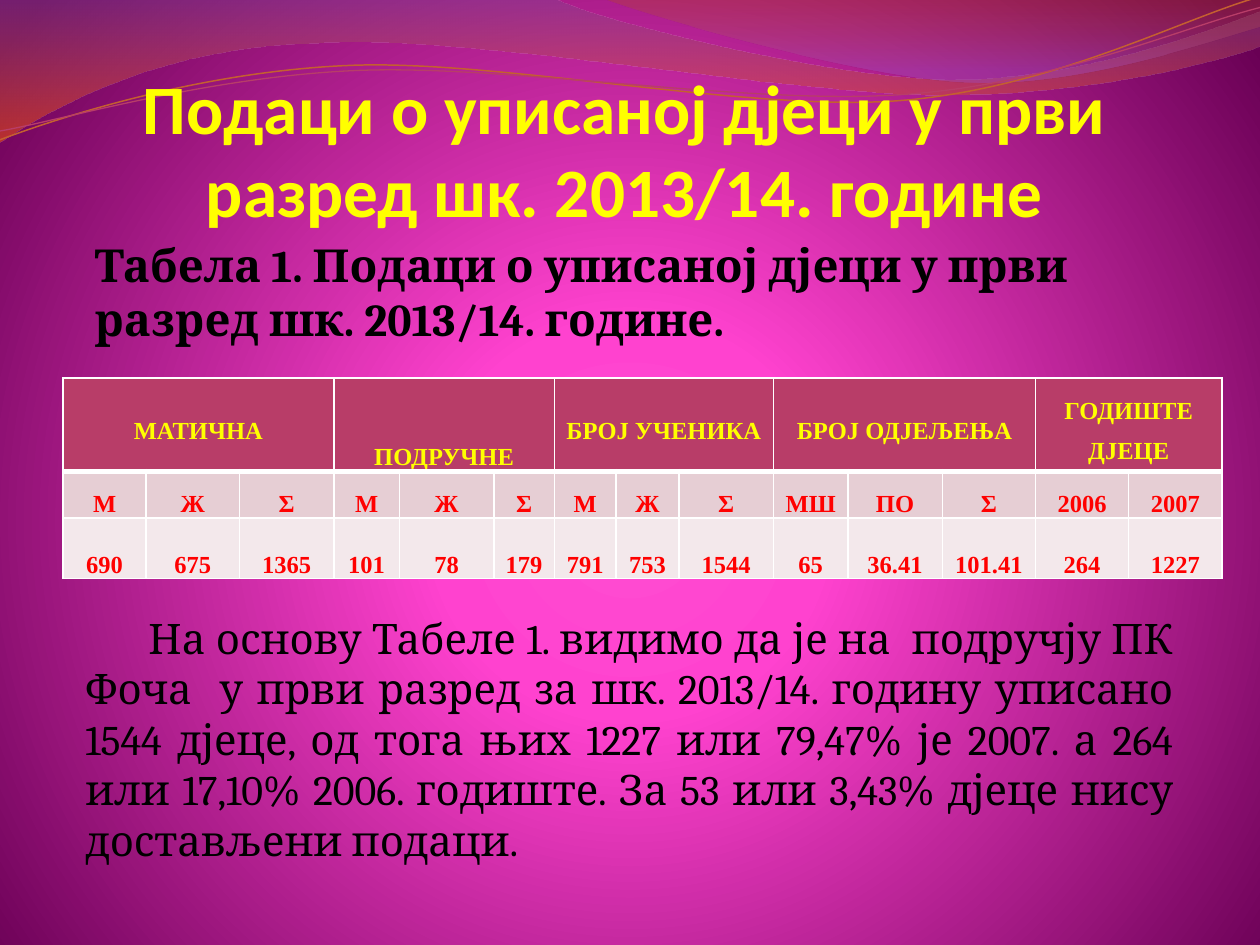
from copy import deepcopy
from math import cos, radians, sin

from lxml import etree
from pptx import Presentation
from pptx.dml.color import RGBColor
from pptx.enum.text import MSO_ANCHOR, MSO_AUTO_SIZE, PP_ALIGN
from pptx.oxml import parse_xml
from pptx.oxml.ns import nsdecls, qn
from pptx.util import Inches, Pt

TOP, MID, LOW = MSO_ANCHOR.TOP, MSO_ANCHOR.MIDDLE, MSO_ANCHOR.BOTTOM
LEFT, CENTER, FULL = PP_ALIGN.LEFT, PP_ALIGN.CENTER, PP_ALIGN.JUSTIFY
FIXED = MSO_AUTO_SIZE.NONE

YELLOW = RGBColor(0xFF, 0xFF, 0x00)
BLACK = RGBColor(0x00, 0x00, 0x00)
RED = RGBColor(0xFF, 0x00, 0x00)
WHITE = RGBColor(0xFF, 0xFF, 0xFF)
WINE = RGBColor(0xB8, 0x3D, 0x68)
ROSE = RGBColor(0xE6, 0xCE, 0xD4)
PALE = RGBColor(0xF3, 0xE8, 0xEB)
RUST = RGBColor(0xC4, 0x5F, 0x30)
PINK = RGBColor(0xFF, 0x4C, 0xD1)
ROSY = RGBColor(0xFF, 0x42, 0xCF)
PLUM = RGBColor(0x69, 0x00, 0x54)
MAUVE = RGBColor(0x83, 0x45, 0x91)
FLAME = RGBColor(0xF3, 0x53, 0x07)
BROWN = RGBColor(0xB7, 0x49, 0x15)
LILAC = RGBColor(0xA1, 0x4B, 0xB4)


def shade(old, stops, course):
    marks = "".join(
        f'<a:gs pos="{pos * 1000}"><a:srgbClr val="{color}">'
        f'<a:alpha val="{alpha * 1000}"/></a:srgbClr></a:gs>'
        for pos, color, alpha in stops)
    fill = parse_xml(f'<a:gradFill {nsdecls("a")} rotWithShape="1">'
                     f'<a:gsLst>{marks}</a:gsLst>{course}</a:gradFill>')
    old.getparent().replace(old, fill)


def style(frame, size, font, color, bold, align):
    for para in frame.paragraphs:
        para.alignment = align
        for run in para.runs:
            run.font.size = Pt(size)
            run.font.name = font
            run.font.bold = bold
            run.font.color.rgb = color


prs = Presentation()
prs.slide_width, prs.slide_height = Inches(10), Inches(7.5)
slide = prs.slides.add_slide(prs.slide_layouts[0])
shapes = slide.shapes
title, lead = slide.placeholders

slide.background.fill.background()
shade(slide.element.find(f'.//{qn("p:bgPr")}/{qn("a:noFill")}'),
      [(0, PINK, 100), (25, ROSY, 100), (100, PLUM, 100)],
      '<a:path path="circle"><a:fillToRect l="10000" t="110000" '
      'r="10000" b="100000"/></a:path>')

waves = [
    ((0, 0), [(4.4, -0.01), (4.76, 0.17, 6.64, 0.63, 7.58, 0.63),
              (8.53, 0.63, 9.58, 0.26, 10, 0.09), (10.01, 0.36),
              (9.83, 0.44, 8.7, 0.76, 7.46, 0.75),
              (6.22, 0.75, 3.82, 0.28, 2.57, 0.34),
              (1.29, 0.36, 0.46, 0.83, -0.01, 1.13)],
     [(0, MAUVE, 45), (100, FLAME, 55)], None),
    ((4.79, -0.01), [(5.09, 0.11, 6.82, 0.62, 7.69, 0.65),
                     (8.56, 0.69, 9.61, 0.32, 10, 0.21), (10, 0)],
     [(0, BROWN, 30), (80, LILAC, 45)], None),
    ((0, 1.11), [(0.48, 0.93, 1.58, 0.57, 2.77, 0.52),
                 (3.95, 0.47, 5.93, 0.89, 7.13, 0.8),
                 (8.33, 0.71, 9.38, 0.15, 9.98, -0.02)],
     None, (RUST, 0.85)),
    ((0, 1.04), [(0.47, 0.96, 1.64, 0.61, 2.83, 0.56),
                 (4.03, 0.51, 5.97, 0.84, 7.17, 0.75),
                 (8.36, 0.67, 9.41, 0.21, 10, 0.06)],
     None, (WINE, 0.75)),
]
tilt = radians(2.7)
for start, steps, stops, line in waves:
    dots = [start]
    for step in steps:
        dots += zip(step[::2], step[1::2])
    if line:
        dots = [(5 + (x - 5) * cos(tilt) - (y - 0.58) * sin(tilt),
                 0.58 + (x - 5) * sin(tilt) + (y - 0.58) * cos(tilt))
                for x, y in dots]
    spots = [(Inches(x), Inches(y)) for x, y in dots]
    build = shapes.build_freeform(*spots[0])
    build.add_line_segments(spots[1:], close=line is None)
    wave = build.convert_to_shape()
    legs = iter(wave.element.findall(f'.//{qn("a:lnTo")}'))
    for step in steps:
        leg = next(legs)
        if len(step) == 6:
            curve = etree.Element(qn("a:cubicBezTo"))
            leg.addprevious(curve)
            for part in (leg, next(legs), next(legs)):
                curve.append(part[0])
                part.getparent().remove(part)
    wave.shadow.inherit = False
    wave.fill.background()
    if line:
        wave.rotation = 357.3
        wave.line.color.rgb = line[0]
        wave.line.width = Pt(line[1])
    else:
        wave.line.fill.background()
        shade(wave.element.spPr.find(qn("a:noFill")), stops,
              '<a:lin ang="5400000" scaled="0"/>')

heads = [
    (title, (0.67, 0.5, 8.59, 2), LOW, 0,
     "Подаци о уписаној дјеци у први разред шк. 2013/14. године\v",
     (39.6, "Calibri", YELLOW, True, CENTER)),
    (lead, (0.75, 1.83, 8.59, 1.92), TOP, 0.05,
     "Табела 1. Подаци о уписаној дјеци у први разред шк. 2013/14. године.",
     (26, "Cambria", BLACK, True, LEFT)),
]
for shape, box, anchor, pad, text, look in heads:
    shapes.element.append(shape.element)
    shape.left, shape.top, shape.width, shape.height = map(Inches, box)
    frame = shape.text_frame
    frame.text = text
    frame.auto_size = FIXED
    frame.vertical_anchor = anchor
    frame.margin_left, frame.margin_right = 0, Inches(0.02)
    frame.margin_top = frame.margin_bottom = Inches(pad)
    style(frame, *look)
para = title.text_frame.paragraphs[0]
font = para.runs[0].font._element
para._p.find(qn("a:br")).append(deepcopy(font))
tail = etree.SubElement(para._p, qn("a:endParaRPr"), dict(font.attrib))
tail.extend(deepcopy(list(font)))

groups = [("МАТИЧНА", 3), ("ПОДРУЧНЕ", 3), ("БРОЈ УЧЕНИКА", 3),
          ("БРОЈ ОДЈЕЉЕЊА", 3), ("ГОДИШТЕ ДЈЕЦЕ", 2)]
names = []
for name, span in groups:
    names += [name] + [""] * (span - 1)
rows = [
    names,
    ["М", "Ж", "Σ"] * 3 + ["МШ", "ПО", "Σ", "2006", "2007"],
    ["690", "675", "1365", "101", "78", "179", "791", "753", "1544",
     "65", "36.41", "101.41", "264", "1227"],
]
wide = [0.66, 0.74, 0.75, 0.52, 0.75, 0.48, 0.49,
        0.5, 0.75, 0.59, 0.75, 0.74, 0.74, 0.74]
high = [0.74, 0.37, 0.48]
table = shapes.add_table(3, 14, Inches(0.5), Inches(3),
                         Inches(9.2), Inches(1.59)).table
for col, size in zip(table.columns, wide):
    col.width = Inches(size)
for row, size in zip(table.rows, high):
    row.height = Inches(size)
for r, row in enumerate(rows):
    for c, text in enumerate(row):
        cell = table.cell(r, c)
        cell.text = text
        cell.margin_left = cell.margin_right = Inches(0.07)
        cell.margin_top = cell.margin_bottom = 0
        cell.vertical_anchor = MID if r == 0 and text != "ПОДРУЧНЕ" else LOW
        style(cell.text_frame, 14, "Times New Roman",
              RED if r else YELLOW, True, CENTER)
        cell.text_frame.paragraphs[0].line_spacing = 1.5
        cell.fill.solid()
        cell.fill.fore_color.rgb = (WINE, ROSE, PALE)[r]
        props = cell._tc.get_or_add_tcPr()
        for i, side in enumerate(("lnL", "lnR", "lnT", "lnB")):
            thick = (r, side) in ((0, "lnB"), (1, "lnT"))
            edge = etree.Element(qn(f"a:{side}"), w=str(Pt(3 if thick else 1)))
            paint = etree.SubElement(edge, qn("a:solidFill"))
            etree.SubElement(paint, qn("a:srgbClr"), val=str(WHITE))
            props.insert(i, edge)
start = 0
for name, span in groups:
    table.cell(0, start).merge(table.cell(0, start + span - 1))
    start += span

note = shapes.add_textbox(Inches(0.58), Inches(4.8), Inches(8.83), Inches(2.12))
frame = note.text_frame
frame.word_wrap = True
frame.vertical_anchor = MID
frame.text = (
    "На основу Табеле 1. видимо да је на  подручју ПК Фоча  у први разред "
    "за шк. 2013/14. годину уписано 1544 дјеце, од тога њих 1227 или 79,47% "
    "је 2007. а 264 или 17,10% 2006. годиште. За 53 или 3,43% дјеце нису "
    "достављени подаци.")
style(frame, 24, "Cambria", BLACK, False, FULL)
frame.paragraphs[0]._p.get_or_add_pPr().set("indent", str(Inches(0.5)))

prs.save("out.pptx")
